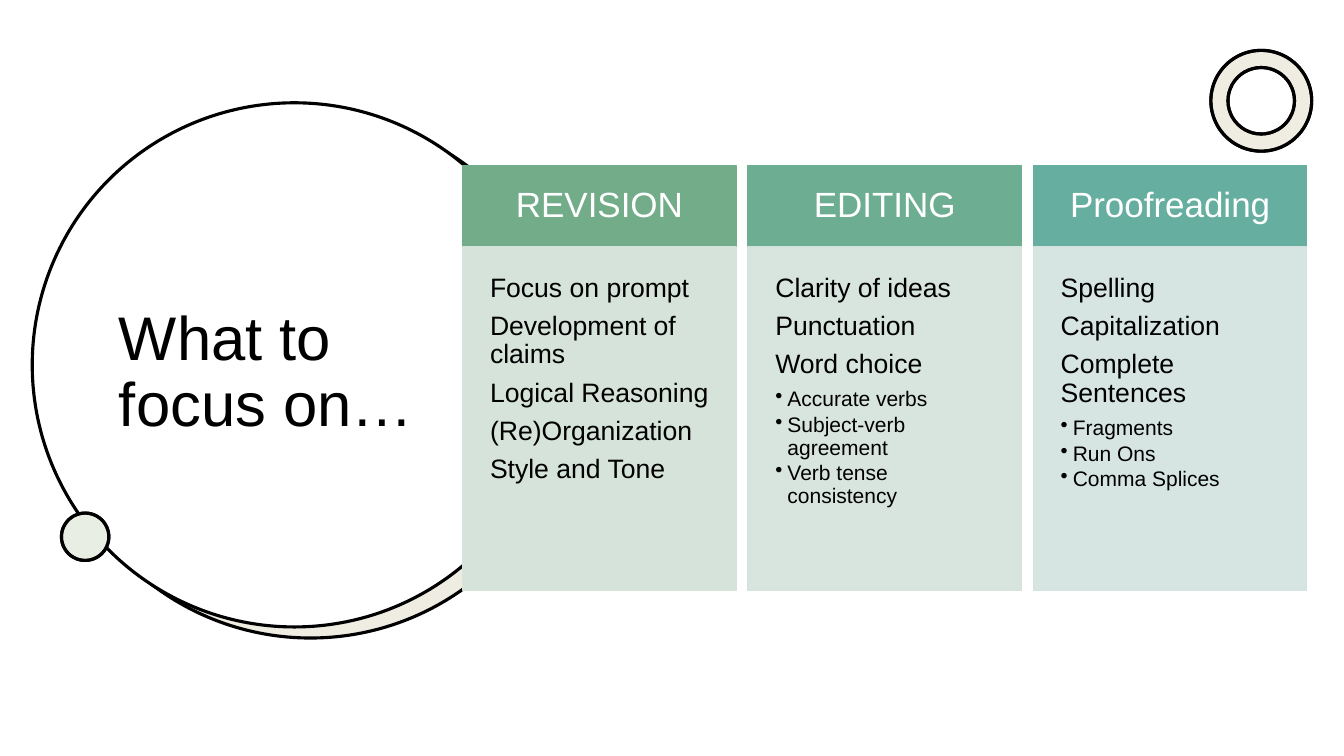
from lxml import etree
from pptx import Presentation
from pptx import util as u
from pptx.dml.color import RGBColor
from pptx.enum import shapes, text
from pptx.oxml.ns import qn

PX = 9144  # EMU per px, 100 px to the inch
BLACK = RGBColor(0x00, 0x00, 0x00)
WHITE = RGBColor(0xFF, 0xFF, 0xFF)
SAND = RGBColor(0xB2, 0xA0, 0x72)
LEAF = RGBColor(0x8D, 0xAA, 0x74)
OVAL, DONUT, RECTANGLE = (shapes.MSO_SHAPE.OVAL, shapes.MSO_SHAPE.DONUT,
                          shapes.MSO_SHAPE.RECTANGLE)

presentation = Presentation()
presentation.slide_width, presentation.slide_height = 1333 * PX, 750 * PX
slide = presentation.slides.add_slide(presentation.slide_layouts[5])


def add_block(kind, left, top, width, height, fill, line=None, line_width=1, opacity=100):
    shape = slide.shapes.add_shape(kind, left * PX, top * PX, width * PX, height * PX)
    shape.shadow.inherit = False
    shape.fill.solid()
    shape.fill.fore_color.rgb = fill
    if opacity < 100:
        color = shape.fill._xPr.find(qn("a:solidFill"))[0]
        etree.SubElement(color, qn("a:alpha"), val=str(opacity * 1000))
    if line is None:
        shape.line.fill.background()
    else:
        shape.line.color.rgb = line
        shape.line.width = u.Pt(line_width)
    return shape


def write(shape, lines, size, color=BLACK, inset=10, align=text.PP_ALIGN.LEFT,
          anchor=text.MSO_ANCHOR.MIDDLE, bullets=(), bullet_size=15):
    frame = shape.text_frame
    frame.word_wrap = True
    frame.auto_size = text.MSO_AUTO_SIZE.NONE
    frame.vertical_anchor = anchor
    frame.margin_left = frame.margin_right = inset * PX
    frame.margin_top = frame.margin_bottom = inset * PX
    for index, line in enumerate([*lines, *bullets]):
        bulleted = index >= len(lines)
        points = bullet_size if bulleted else size
        paragraph = frame.add_paragraph() if index else frame.paragraphs[0]
        paragraph.alignment = align
        paragraph.line_spacing = 0.9
        paragraph.space_before = u.Pt(0)
        paragraph.space_after = u.Pt(points * (0.15 if bulleted else 0.35))
        run = paragraph.add_run()
        run.text = line
        run.font.name = "Arial"
        run.font.size = u.Pt(points)
        run.font.color.rgb = color
        if bulleted:
            paragraph.level = 1
            properties = paragraph._p.get_or_add_pPr()
            properties.set("marL", str(12 * PX))
            properties.set("indent", str(-12 * PX))
            etree.SubElement(properties, qn("a:buChar"), char="•")


# Circles: kind, left, top, diameter, fill, outline, opacity
circles = [
    (OVAL, 49, 114, 520, WHITE, None, 100),
    (OVAL, 48, 113, 520, SAND, BLACK, 20),
    (OVAL, 32, 102, 520, WHITE, BLACK, 100),
    (DONUT, 1201, 50, 100, WHITE, BLACK, 100),
    (DONUT, 1201, 50, 100, SAND, BLACK, 20),
    (OVAL, 61, 509, 47, WHITE, BLACK, 100),
    (OVAL, 61, 509, 47, LEAF, BLACK, 20),
]
for kind, left, top, diameter, fill, outline, opacity in circles:
    circle = add_block(kind, left, top, diameter, diameter, fill, outline, 2.25, opacity)
    if kind == DONUT:
        circle.adjustments[0] = 0.17

# Title, brought in front of the circles
title = slide.shapes.title
title.left, title.top, title.width, title.height = 108 * PX, 185 * PX, 350 * PX, 371 * PX
write(title, ["What to focus on…"], 44)
title.element.getparent().append(title.element)

# Columns: heading, heading fill, body fill, body opacity, lines, bullets
columns = [
    ("REVISION", RGBColor(0x73, 0xAC, 0x89), RGBColor(0xD5, 0xE3, 0xDA), 100,
     ["Focus on prompt", "Development of claims", "Logical Reasoning",
      "(Re)Organization", "Style and Tone"], []),
    ("EDITING", RGBColor(0x6D, 0xAD, 0x92), RGBColor(0xD4, 0xE3, 0xDC), 90,
     ["Clarity of ideas", "Punctuation", "Word choice"],
     ["Accurate verbs", "Subject-verb agreement", "Verb tense consistency"]),
    ("Proofreading", RGBColor(0x66, 0xAE, 0x9F), RGBColor(0xD3, 0xE3, 0xDF), 90,
     ["Spelling", "Capitalization", "Complete Sentences"],
     ["Fragments", "Run Ons", "Comma Splices"]),
]
for index, (heading, head_fill, body_fill, opacity, lines, bullets) in enumerate(columns):
    left = 459 + 283 * index
    head = add_block(RECTANGLE, left, 164, 271, 81, head_fill, head_fill)
    write(head, [heading], 25, color=WHITE, inset=21, align=text.PP_ALIGN.CENTER)
    body = add_block(RECTANGLE, left, 245, 271, 341, body_fill, body_fill, opacity=opacity)
    write(body, lines, 19, inset=27, anchor=text.MSO_ANCHOR.TOP, bullets=bullets)

presentation.save("out.pptx")
